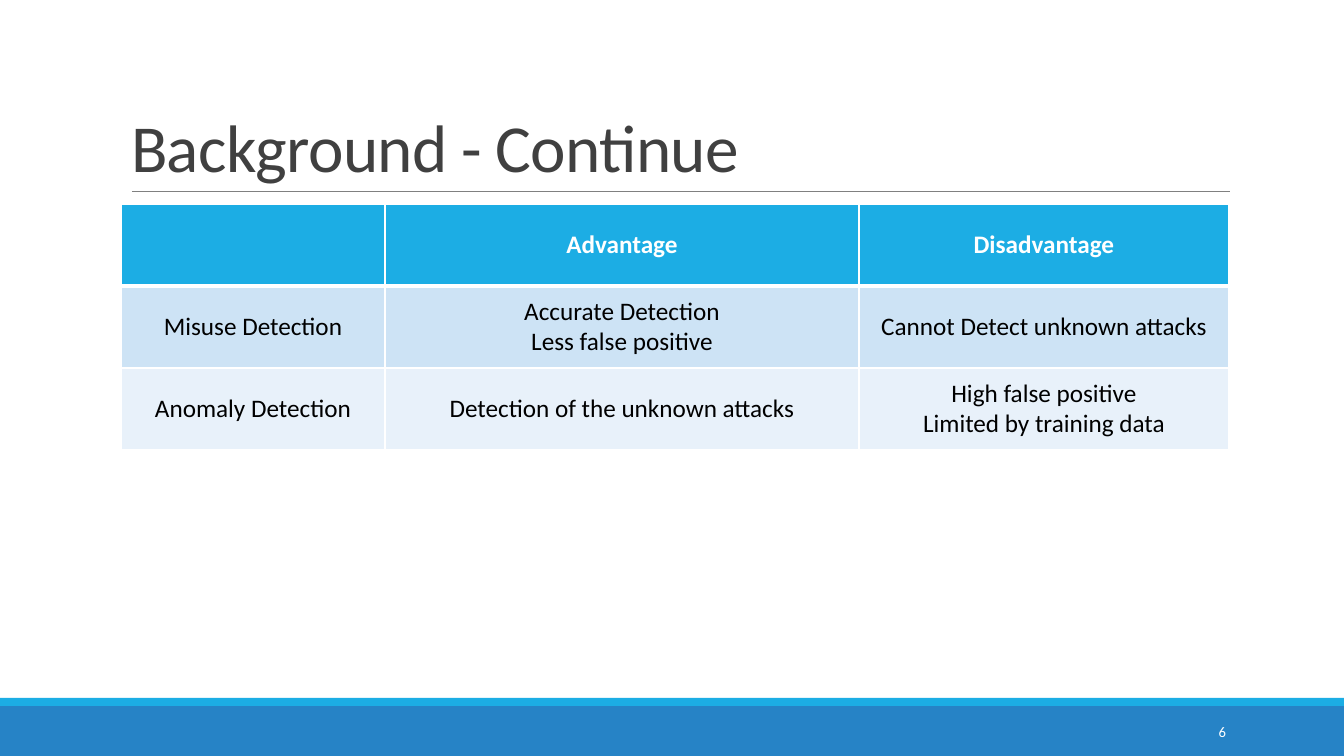
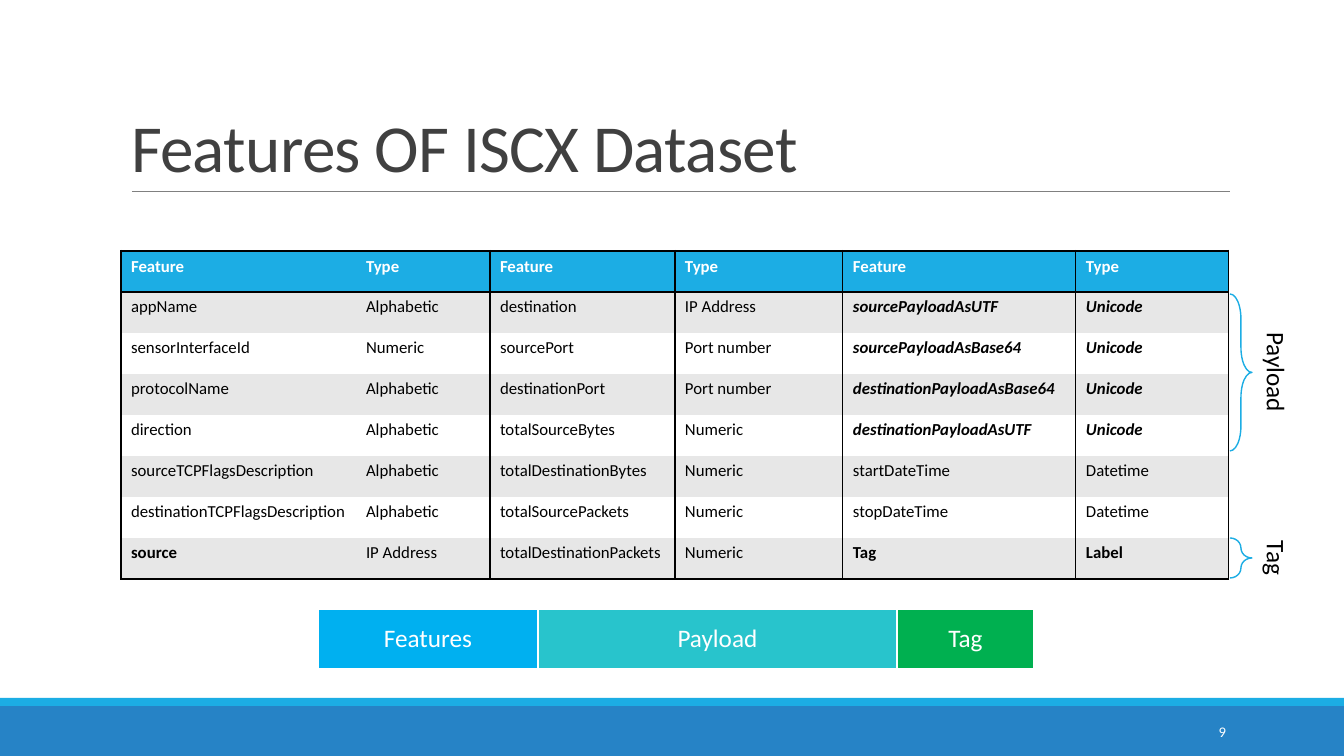
from lxml.etree import SubElement
from pptx import Presentation
from pptx.dml.color import RGBColor
from pptx.enum.shapes import MSO_CONNECTOR as LINE, MSO_SHAPE as SHAPE
from pptx.enum.text import MSO_ANCHOR as ANCHOR, MSO_AUTO_SIZE as FIT, PP_ALIGN as ALIGN
from pptx.oxml.ns import qn
from pptx.util import Emu, Pt

PLAIN_TABLE = "{2D5ABB26-0587-4C30-8999-92F81FD0307C}"
SKY, BLUE, WHITE, BLACK = "1CADE4", "2683C6", "FFFFFF", "000000"
GRAY, DARK, STRIPE = "808080", "404040", "E7E7E7"


def px(n):
    return Emu(round(n * 914400 / 100.8))


def rgb(value):
    return RGBColor.from_string(value)


def put(tf, text, size=18, color=BLACK, bold=False, italic=False, align=ALIGN.LEFT,
        spacing=None, tracking=None):
    for i, line in enumerate(text.split("\n")):
        p = tf.paragraphs[0] if i == 0 else tf.add_paragraph()
        p.alignment, p.line_spacing = align, spacing
        r = p.add_run()
        r.text = line
        r.font.name, r.font.size = "Calibri", Pt(size)
        r.font.bold, r.font.italic = bold, italic
        r.font.color.rgb = rgb(color)
        if tracking is not None:
            r.font._element.set("spc", str(tracking))


def set_borders(cell, color, widths):
    tc_pr = cell._tc.get_or_add_tcPr()
    sides = [side for side in "LRTB" if side in widths]
    for i, side in enumerate(sides):
        ln = SubElement(tc_pr, qn(f"a:ln{side}"), w=str(Pt(widths[side])))
        fill = SubElement(ln, qn("a:solidFill"))
        SubElement(fill, qn("a:srgbClr"), val=color)
        tc_pr.insert(i, ln)


class Deck:
    """Holds the shared style and the slide being built."""

    def __init__(self):
        self.prs = Presentation()
        self.prs.slide_width, self.prs.slide_height = px(1344), px(756)

    def slide(self, title, number):
        self.s = self.prs.slides.add_slide(self.prs.slide_layouts[5])
        self.shape(SHAPE.RECTANGLE, 0, 706, 1344, 50, fill=BLUE)
        self.shape(SHAPE.RECTANGLE, 0, 698, 1344, 8, fill=SKY)
        self.line(132, 191, 1230, 191)
        sp = self.s.shapes.title
        sp.left, sp.top, sp.width, sp.height = map(px, (121, 31, 1109, 160))
        tf = sp.text_frame
        tf.auto_size, tf.vertical_anchor = FIT.NONE, ANCHOR.BOTTOM
        put(tf, title, size=48, color=DARK, spacing=0.85, tracking=-50)
        self.text(str(number), 1092, 712, 144, 40, size=10.5, color=WHITE, align=ALIGN.RIGHT)

    def shape(self, kind, x, y, w, h, fill=None, line=None, adjust=None):
        sp = self.s.shapes.add_shape(kind, *map(px, (x, y, w, h)))
        sp.shadow.inherit = False
        if fill:
            sp.fill.solid()
            sp.fill.fore_color.rgb = rgb(fill)
        else:
            sp.fill.background()
        if line:
            sp.line.color.rgb, sp.line.width = rgb(line), Pt(1)
        else:
            sp.line.fill.background()
        if adjust is not None:
            sp.adjustments[0] = adjust

    def line(self, x1, y1, x2, y2):
        cn = self.s.shapes.add_connector(LINE.STRAIGHT, *map(px, (x1, y1, x2, y2)))
        cn.line.color.rgb, cn.line.width = rgb(GRAY), Pt(0.5)
        SubElement(cn._element.spPr, qn("a:effectLst"))

    def text(self, text, x, y, w, h, vertical=False, **fmt):
        tf = self.s.shapes.add_textbox(*map(px, (x, y, w, h))).text_frame
        tf.word_wrap, tf.vertical_anchor = True, ANCHOR.MIDDLE
        if vertical:
            tf._txBody.bodyPr.set("vert", "vert")
            tf.margin_left = tf.margin_right = tf.margin_top = tf.margin_bottom = 0
        put(tf, text, **fmt)

    def brace(self, label, y, h, middle):
        self.shape(SHAPE.RIGHT_BRACE, 1230, y, 22, h, line=SKY, adjust=1.136)
        self.text(label, 1252, middle - 51, 50, 102, vertical=True, align=ALIGN.CENTER)

    def table(self, rows, x, y, widths, height, fill, fmt, borders, line, anchor=ANCHOR.MIDDLE):
        frame = self.s.shapes.add_table(
            len(rows), len(widths), *map(px, (x, y, sum(widths), height * len(rows))))
        tbl = frame.table
        tbl._tbl.tblPr.find(qn("a:tableStyleId")).text = PLAIN_TABLE
        for col, width in zip(tbl.columns, widths):
            col.width = px(width)
        for i, row in enumerate(rows):
            tbl.rows[i].height = px(height)
            for j, text in enumerate(row):
                cell = tbl.cell(i, j)
                cell.vertical_anchor = anchor
                cell.fill.solid()
                cell.fill.fore_color.rgb = rgb(fill(i, j))
                put(cell.text_frame, text, **fmt(i, j))
                set_borders(cell, line, borders(i, j))


METHODS = [
    ["", "Advantage", "Disadvantage"],
    ["Misuse Detection", "Accurate Detection\nLess false positive", "Cannot Detect unknown attacks"],
    ["Anomaly Detection", "Detection of the unknown attacks",
     "High false positive\nLimited by training data"],
]
FEATURES = [
    ["Feature", "Type"] * 3,
    ["appName", "Alphabetic", "destination", "IP Address", "sourcePayloadAsUTF", "Unicode"],
    ["sensorInterfaceId", "Numeric", "sourcePort", "Port number", "sourcePayloadAsBase64", "Unicode"],
    ["protocolName", "Alphabetic", "destinationPort", "Port number",
     "destinationPayloadAsBase64", "Unicode"],
    ["direction", "Alphabetic", "totalSourceBytes", "Numeric", "destinationPayloadAsUTF", "Unicode"],
    ["sourceTCPFlagsDescription", "Alphabetic", "totalDestinationBytes", "Numeric",
     "startDateTime", "Datetime"],
    ["destinationTCPFlagsDescription", "Alphabetic", "totalSourcePackets", "Numeric",
     "stopDateTime", "Datetime"],
    ["source", "IP Address", "totalDestinationPackets", "Numeric", "Tag", "Label"],
]


def edges(i, j, right=1, bottom=1, top=1):
    widths = {"R": right, "B": bottom}
    if j == 0:
        widths["L"] = 1
    if i == 0:
        widths["T"] = top
    return {side: w for side, w in widths.items() if w}


def method_format(i, j):
    return dict(color=BLACK if i else WHITE, bold=i == 0, align=ALIGN.CENTER)


def feature_format(i, j):
    payload = 1 <= i <= 4 and j >= 4
    bold = i == 0 or payload or (i == 7 and j in (0, 4, 5))
    return dict(size=12, color=BLACK if i else WHITE, bold=bold, italic=payload)


def feature_fill(i, j):
    if i == 0:
        return SKY
    return STRIPE if i % 2 else WHITE


def main():
    deck = Deck()

    deck.slide("Background - Continue", 6)
    deck.table(METHODS, 121, 204, [264, 474, 370], 82,
               fill=lambda i, j: (SKY, "CDE3F5", "E8F1FA")[i], fmt=method_format,
               borders=lambda i, j: edges(i, j, bottom=1 if i else 3), line=WHITE)

    deck.slide("Features OF ISCX Dataset", 9)
    deck.table(FEATURES, 121, 251, [235, 134, 185, 168, 233, 153], 41,
               fill=feature_fill, fmt=feature_format, line=BLACK, anchor=ANCHOR.TOP,
               borders=lambda i, j: edges(i, j, right=min(j, 1), top=2,
                                          bottom=2 if i in (0, 7) else 0))
    deck.brace("Payload", 294, 157, 372)
    deck.brace("Tag", 538, 40, 558)
    deck.table([["Features", "Payload", "Tag"]], 318, 609, [220, 359, 137], 60,
               fill=lambda i, j: ("00B0F0", "28C4CC", "00B050")[j],
               fmt=lambda i, j: dict(color=WHITE, align=ALIGN.CENTER),
               borders=edges, line=WHITE)

    deck.prs.save("out.pptx")


if __name__ == "__main__":
    main()
